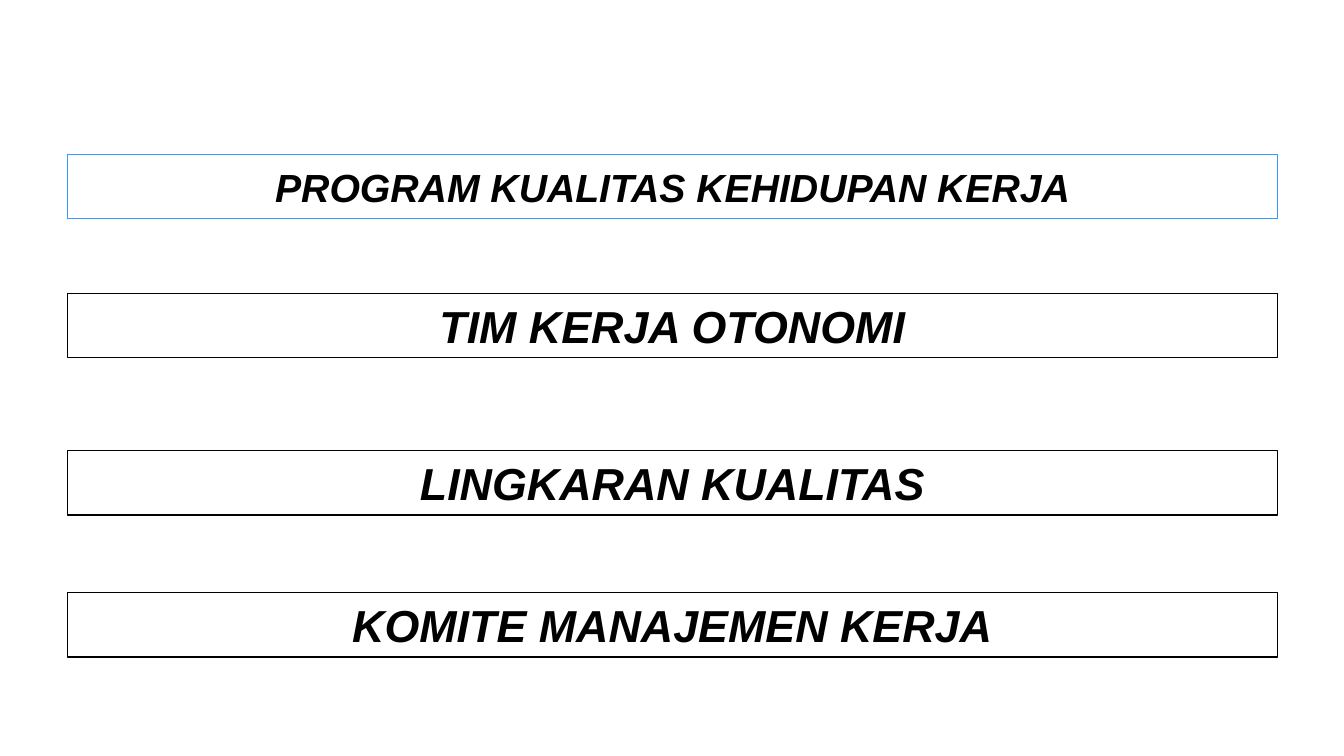
"""Build the slide on programmes for the quality of working life."""
from pptx import Presentation
from pptx import util as u
from pptx.dml.color import RGBColor
from pptx.enum import shapes, text

COLORS = {"paper": "FFFFFF", "ink": "000000", "accent": "3399FF"}
LEFT, WIDTH, HEIGHT = 0.67, 12, 0.64
PROGRAMS = [
    ("TIM KERJA OTONOMI", 2.91),
    ("LINGKARAN KUALITAS", 4.47),
    ("KOMITE MANAJEMEN KERJA", 5.88),
]


class ProgramSlide:
    """Hold the shared style and the slide being built."""

    font_name = "Arial"

    def __init__(self, deck):
        """Add a title-only slide to the deck."""
        self.slide = deck.slides.add_slide(deck.slide_layouts[5])

    def color(self, name):
        """Return a named colour."""
        return RGBColor.from_string(COLORS[name])

    def style(self, bar, wording, size, outline):
        """Fill, outline and letter one bar."""
        bar.fill.solid()
        bar.fill.fore_color.rgb = self.color("paper")
        bar.line.color.rgb = self.color(outline)
        bar.line.width = u.Pt(1)
        frame = bar.text_frame
        frame.text = wording
        frame.word_wrap = True
        frame.auto_size = text.MSO_AUTO_SIZE.NONE
        frame.vertical_anchor = text.MSO_ANCHOR.MIDDLE
        paragraph = frame.paragraphs[0]
        paragraph.alignment = text.PP_ALIGN.CENTER
        font = paragraph.runs[0].font
        font.name = self.font_name
        font.size = u.Pt(size)
        font.bold = font.italic = True
        font.color.rgb = self.color("ink")

    def title(self, wording, top):
        """Place the heading in the title placeholder."""
        heading = self.slide.shapes.title
        heading.left, heading.top = u.Inches(LEFT), u.Inches(top)
        heading.width, heading.height = u.Inches(WIDTH), u.Inches(HEIGHT)
        self.style(heading, wording, 28, "accent")

    def program(self, wording, top):
        """Add one programme bar."""
        bar = self.slide.shapes.add_shape(
            shapes.MSO_SHAPE.RECTANGLE,
            u.Inches(LEFT), u.Inches(top), u.Inches(WIDTH), u.Inches(HEIGHT),
        )
        bar.shadow.inherit = False
        self.style(bar, wording, 32, "ink")


def main():
    """Build and save the deck."""
    deck = Presentation()
    deck.slide_width, deck.slide_height = u.Inches(13.33), u.Inches(7.5)
    page = ProgramSlide(deck)
    page.title("PROGRAM KUALITAS KEHIDUPAN KERJA", 1.53)
    for wording, top in PROGRAMS:
        page.program(wording, top)
    deck.save("out.pptx")


if __name__ == "__main__":
    main()
